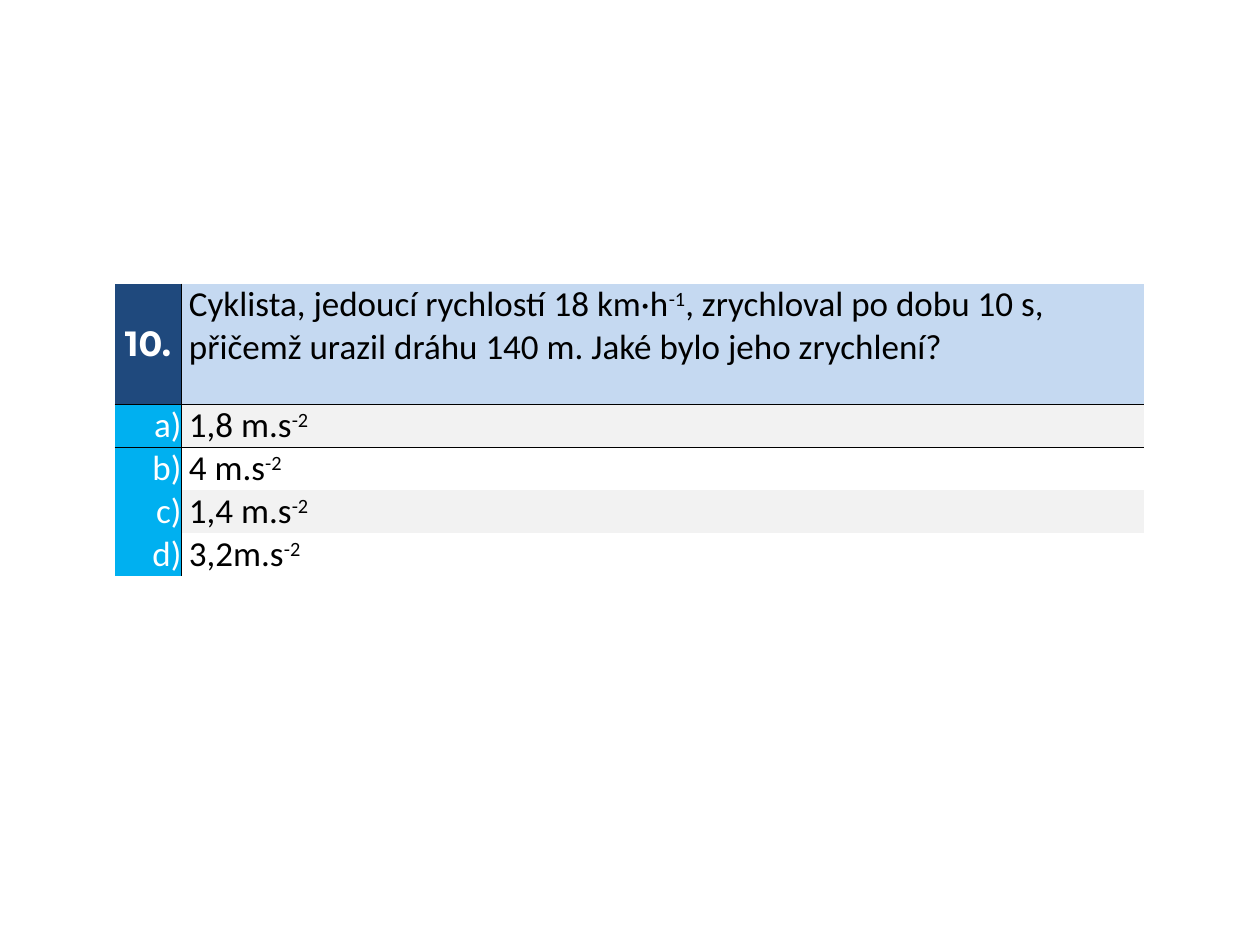
"""Build a physics quiz slide with one question and four answers."""
from dataclasses import dataclass

from lxml import etree
from pptx import Presentation
from pptx import util as u
from pptx.dml.color import RGBColor
from pptx.enum import text
from pptx.oxml.ns import qn


@dataclass(frozen=True)
class Theme:
    """Colours, fonts and sizes of the quiz."""
    navy: str = "1F497D"
    sky: str = "00B0F0"
    pale: str = "C5D9F1"
    grey: str = "F2F2F2"
    white: str = "FFFFFF"
    black: str = "000000"
    body_font: str = "Calibri"
    number_font: str = "Montserrat"
    size: float = 20
    rule: float = 0.5
    indent: float = 0.06
    plain_table: str = "{2D5ABB26-0587-4C30-8999-92F81FD0307C}"


def write(frame, content, *, font, size, color, bold=False, align=text.PP_ALIGN.LEFT):
    """Write content into a frame, raising the parts between carets."""
    para = frame.paragraphs[0]
    para.alignment = align
    for index, part in enumerate(content.split("^")):
        for number, line in enumerate(part.split("\n")):
            if number:
                para.add_line_break()
            if not line:
                continue
            span = para.add_run()
            span.text = line
            span.font.name = font
            span.font.size = u.Pt(size)
            span.font.bold = bold
            span.font.color.rgb = RGBColor.from_string(color)
            if index % 2:
                span.font._element.set("baseline", "30000")


class QuizSlide:
    """Hold the theme and the current slide."""

    def __init__(self, deck, theme):
        """Add a blank slide to the deck."""
        self.theme = theme
        self.width, self.height = deck.slide_width, deck.slide_height
        self.slide = deck.slides.add_slide(deck.slide_layouts[6])

    def table(self, left, top, columns, rows):
        """Add a plain table whose lengths are shares of the slide."""
        widths = [int(share * self.width) for share in columns]
        heights = [int(share * self.height) for share in rows]
        box = self.slide.shapes.add_table(
            len(rows), len(columns), int(left * self.width), int(top * self.height),
            sum(widths), sum(heights))
        grid = box.table
        grid.first_row = grid.horz_banding = False
        grid._tbl.tblPr.find(qn("a:tableStyleId")).text = self.theme.plain_table
        for column, width in zip(grid.columns, widths):
            column.width = width
        for row, height in zip(grid.rows, heights):
            row.height = height
        return grid

    def border(self, cell, side):
        """Draw one thin edge of a cell."""
        line = etree.SubElement(cell._tc.get_or_add_tcPr(), qn(f"a:ln{side}"),
                                w=str(u.Pt(self.theme.rule)))
        fill = etree.SubElement(line, qn("a:solidFill"))
        etree.SubElement(fill, qn("a:srgbClr"), val=self.theme.black)

    def cell(self, cell, content, *, fill, anchor, borders, indent=0, **style):
        """Fill, border and write one cell."""
        cell.margin_left = u.Inches(indent)
        cell.margin_right = cell.margin_top = cell.margin_bottom = 0
        cell.vertical_anchor = anchor
        for side in borders:
            self.border(cell, side)
        if fill:
            cell.fill.solid()
            cell.fill.fore_color.rgb = RGBColor.from_string(fill)
        else:
            cell.fill.background()
        write(cell.text_frame, content, size=self.theme.size, **style)

    def quiz(self, number, question, answers):
        """Add the question row and its lettered answers."""
        theme, anchor = self.theme, text.MSO_ANCHOR
        grid = self.table(0.091, 0.3, (0.053, 0.764), [0.128] + [0.0455] * len(answers))
        self.cell(grid.cell(0, 0), number, fill=theme.navy, anchor=anchor.MIDDLE,
                  borders="RB", font=theme.number_font, color=theme.white, bold=True,
                  align=text.PP_ALIGN.CENTER)
        self.cell(grid.cell(0, 1), question, fill=theme.pale, anchor=anchor.TOP,
                  borders="LB", indent=theme.indent, font=theme.body_font,
                  color=theme.black)
        for row, (letter, answer) in enumerate(zip("abcd", answers), 1):
            top = "T" if row == 1 else ""
            self.cell(grid.cell(row, 0), f"{letter})", fill=theme.sky,
                      anchor=anchor.MIDDLE, borders="R" + top, font=theme.body_font,
                      color=theme.white, align=text.PP_ALIGN.RIGHT)
            self.cell(grid.cell(row, 1), answer, fill=theme.grey if row % 2 else None,
                      anchor=anchor.BOTTOM, borders="L" + top, indent=theme.indent,
                      font=theme.body_font, color=theme.black)


def main():
    """Build and save the deck."""
    deck = Presentation()
    deck.slide_width, deck.slide_height = u.Inches(10), u.Inches(7.5)
    QuizSlide(deck, Theme()).quiz(
        "10.",
        "Cyklista, jedoucí rychlostí 18 km·h^-1^, zrychloval po dobu 10 s,\n"
        "přičemž urazil dráhu 140 m. Jaké bylo jeho zrychlení?",
        ["1,8 m.s^-2^", "4 m.s^-2^", "1,4 m.s^-2^", "3,2m.s^-2^"])
    deck.save("out.pptx")


if __name__ == "__main__":
    main()
